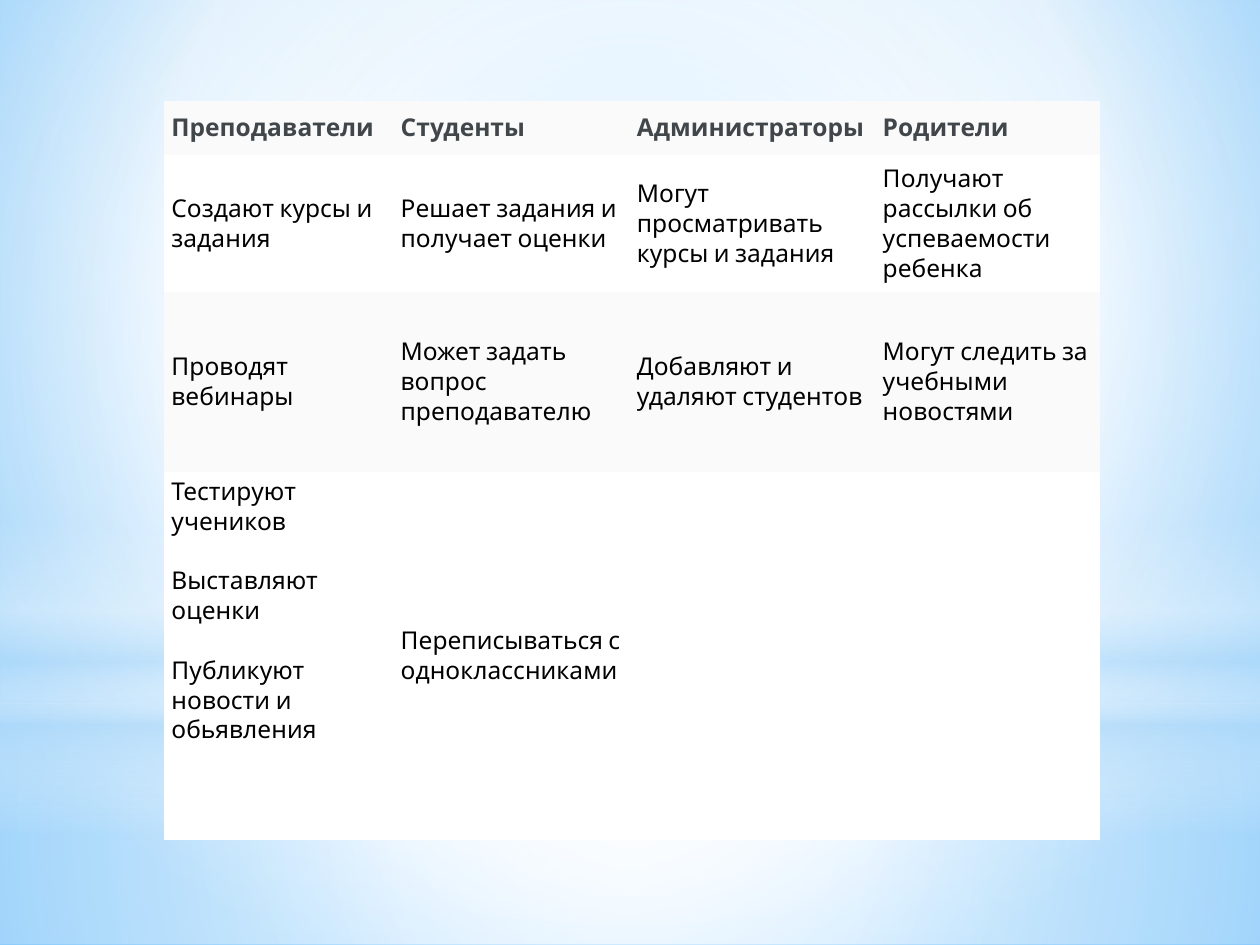
from lxml.etree import SubElement
from pptx import Presentation
from pptx.dml.color import RGBColor
from pptx.enum.shapes import MSO_SHAPE
from pptx.enum.text import MSO_ANCHOR
from pptx.oxml.ns import qn
from pptx.util import Pt

COLORS = {
    "white": "FFFFFF",
    "band": "FAFAFA",
    "heading": "40464A",
    "text": "000000",
    "pale": "B4DCFA",
    "sky": "9ED5FF",
    "azure": "5BB9FF",
}
NO_GRID_STYLE = "{2D5ABB26-0587-4C30-8999-92F81FD0307C}"
CENTER = (50, 50, 50, 50)
COLUMN_WIDTHS = (131, 135, 140.5, 128.5)
ROW_HEIGHTS = (31, 78.5, 102.5, 210.5)
ROWS = [
    ["Преподаватели", "Студенты", "Администраторы", "Родители"],
    ["Создают курсы и задания", "Решает задания и получает оценки",
     "Могут просматривать курсы и задания",
     "Получают рассылки об успеваемости ребенка"],
    ["Проводят вебинары", "Может задать вопрос преподавателю",
     "Добавляют и удаляют студентов", "Могут следить за учебными новостями"],
    ["Тестируют учеников\nВыставляют оценки\nПубликуют новости и обьявления",
     "Переписываться с одноклассниками", "", ""],
]


class SlideBuilder:
    font_name = "Cabin"
    font_size = 14
    paragraph_gap = 17
    cell_margins = {"margin_left": 4.5, "margin_right": 4.5,
                    "margin_top": 3, "margin_bottom": 3}

    def __init__(self, slide):
        self.slide = slide

    def gradient(self, fill, element, stops, focus=None):
        fill.gradient()
        gradient = element.find(".//" + qn("a:gradFill"))
        for child in list(gradient):
            gradient.remove(child)
        stop_list = SubElement(gradient, qn("a:gsLst"))
        for position, color, opacity in stops:
            stop = SubElement(stop_list, qn("a:gs"), pos=str(position * 1000))
            value = SubElement(stop, qn("a:srgbClr"), val=COLORS[color])
            if opacity < 100:
                SubElement(value, qn("a:alpha"), val=str(opacity * 1000))
        if focus:
            shade = SubElement(gradient, qn("a:path"), path="circle")
            sides = {side: str(value * 1000) for side, value in zip("ltrb", focus)}
            SubElement(shade, qn("a:fillToRect"), **sides)
        else:
            SubElement(gradient, qn("a:lin"), ang="5400000", scaled="0")

    def background(self, stops, focus):
        self.gradient(self.slide.background.fill, self.slide.element, stops, focus)

    def glow(self, kind, top, height, stops, focus=None):
        shape = self.slide.shapes.add_shape(kind, Pt(0), Pt(top), Pt(720), Pt(height))
        shape.shadow.inherit = False
        shape.line.fill.background()
        self.gradient(shape.fill, shape.element, stops, focus)

    def cell(self, cell, text, fill, color, bold):
        cell.fill.solid()
        cell.fill.fore_color.rgb = RGBColor.from_string(COLORS[fill])
        for name, value in self.cell_margins.items():
            setattr(cell, name, Pt(value))
        several = "\n" in text
        cell.vertical_anchor = MSO_ANCHOR.TOP if several else MSO_ANCHOR.MIDDLE
        cell.text = text
        font_format = {"name": self.font_name, "size": Pt(self.font_size), "bold": bold}
        for paragraph in cell.text_frame.paragraphs:
            if several:
                paragraph.space_after = Pt(self.paragraph_gap)
            for name, value in font_format.items():
                setattr(paragraph.font, name, value)
            paragraph.font.color.rgb = RGBColor.from_string(COLORS[color])
            for run in paragraph.runs:
                for name, value in font_format.items():
                    setattr(run.font, name, value)
                run.font.color.rgb = RGBColor.from_string(COLORS[color])

    def table(self, left, top, widths, heights, rows):
        frame = self.slide.shapes.add_table(
            len(heights), len(widths), Pt(left), Pt(top),
            Pt(sum(widths)), Pt(sum(heights)))
        table = frame.table
        frame.element.find(".//" + qn("a:tableStyleId")).text = NO_GRID_STYLE
        table.first_row = table.horz_banding = False
        for column, width in zip(table.columns, widths):
            column.width = Pt(width)
        for index, (row, height, texts) in enumerate(zip(table.rows, heights, rows)):
            row.height = Pt(height)
            heading = index == 0
            for cell, text in zip(row.cells, texts):
                self.cell(cell, text, "white" if index % 2 else "band",
                          "heading" if heading else "text", heading)


def main():
    presentation = Presentation()
    presentation.slide_width, presentation.slide_height = Pt(720), Pt(540)
    builder = SlideBuilder(presentation.slides.add_slide(presentation.slide_layouts[6]))

    builder.background(
        [(0, "sky", 100), (60, "white", 100), (100, "azure", 100)], (20, 10, 20, 60))
    builder.glow(MSO_SHAPE.RECTANGLE, 402, 138,
                 [(0, "white", 91), (37, "white", 76), (100, "pale", 79)], CENTER)
    builder.glow(MSO_SHAPE.RECTANGLE, 0, 402,
                 [(0, "white", 89), (48, "white", 62), (100, "pale", 79)], CENTER)
    builder.glow(MSO_SHAPE.RECTANGLE, 297, 180,
                 [(0, "white", 0), (29, "white", 30), (45, "pale", 40),
                  (55, "white", 26), (65, "pale", 60), (100, "white", 0)])
    builder.glow(MSO_SHAPE.OVAL, 126, 402,
                 [(0, "white", 100), (56, "white", 0)], CENTER)
    builder.table(93.5, 57.5, COLUMN_WIDTHS, ROW_HEIGHTS, ROWS)

    presentation.save("out.pptx")


if __name__ == "__main__":
    main()
